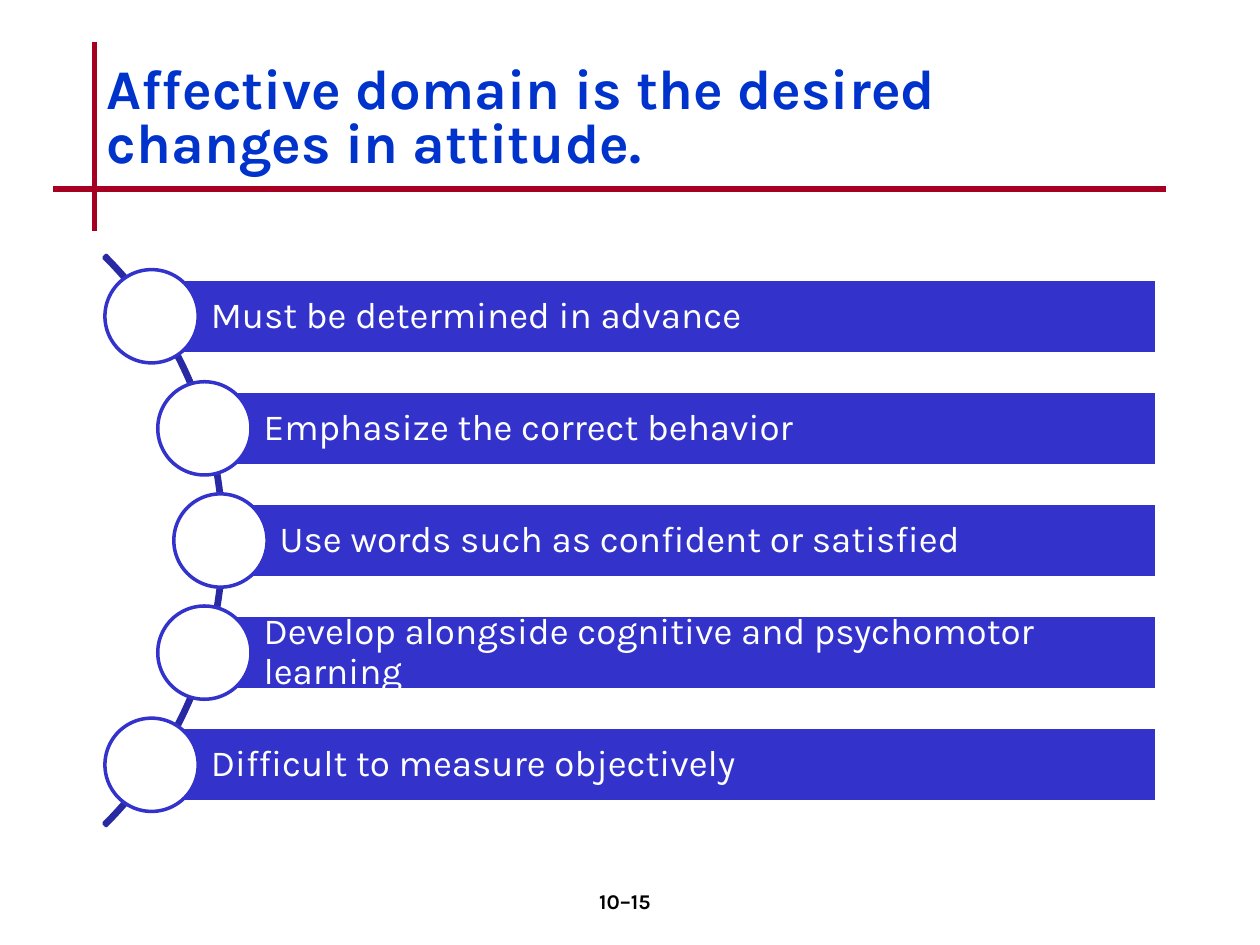
import math
from pptx import Presentation, util as u
from pptx.dml.color import RGBColor
from pptx.enum import shapes, text
from pptx.oxml.ns import qn
from lxml import etree

prs = Presentation()
prs.slide_width, prs.slide_height = u.Inches(10), u.Inches(7.5)
s = prs.slides.add_slide(prs.slide_layouts[6])

# Grid: 10 columns by 7.5 rows
COL, ROW = prs.slide_width / 10, prs.slide_height / 7.5


def grid(*values):
    return [round(v * unit) for v, unit in zip(values, (COL, ROW) * 2)]


def write(sp, wording, color, size, bold=False, spacing=1.0,
          align=text.PP_ALIGN.LEFT, **frame):
    tf = sp.text_frame
    for name, value in {"word_wrap": True, **frame}.items():
        setattr(tf, name, value)
    p = tf.paragraphs[0]
    p.alignment, p.line_spacing = align, spacing
    r = p.add_run()
    r.text = wording
    font = {"name": "Karla", "size": u.Pt(size), "bold": bold}
    for name, value in font.items():
        setattr(r.font, name, value)
    r.font.color.rgb = RGBColor.from_string(color)


# Crossed rules beside and below the title
for ends in [(0.75, 0.33, 0.75, 1.83), (0.42, 1.5, 9.25, 1.5)]:
    rule = s.shapes.add_connector(shapes.MSO_CONNECTOR.STRAIGHT, *grid(*ends))
    rule.line.color.rgb = RGBColor.from_string("A50021")
    rule.line.width = u.Pt(3)
    etree.SubElement(rule._element.spPr, qn("a:effectLst"))

# Title
title = s.shapes.add_textbox(*grid(0.75, 0.33, 8.5, 1.25))
write(title, "Affective domain is the desired changes in attitude.", "0033CC", 32,
      bold=True, spacing=0.8, vertical_anchor=text.MSO_ANCHOR.MIDDLE)

# Arc that carries the circles
ARC_X, ARC_Y, ARC_R = -1.42, 4.29, 3.2
arc = s.shapes.add_shape(
    shapes.MSO_SHAPE.BLOCK_ARC,
    *grid(ARC_X - ARC_R, ARC_Y - ARC_R, 2 * ARC_R, 2 * ARC_R))
for i, value in enumerate((189, 27, 0.004)):
    arc.adjustments[i] = value
arc.shadow.inherit = False
arc.fill.background()
arc.line.color.rgb = RGBColor.from_string("2929A3")
arc.line.width = u.Pt(2)

# Bars, each starting at the centre of its circle on the arc
items = [
    "Must be determined in advance",
    "Emphasize the correct behavior",
    "Use words such as confident or satisfied",
    "Develop alongside cognitive and psychomotor learning",
    "Difficult to measure objectively",
]
PITCH, BAR_H, RIGHT, DIAM, TRACK_R = 0.89, 0.59, 9.18, 0.74, 3.17
for i, item in enumerate(items):
    dy = (i - 2) * PITCH
    x, y = ARC_X + math.sqrt(TRACK_R ** 2 - dy ** 2), ARC_Y + dy
    bar = s.shapes.add_shape(shapes.MSO_SHAPE.RECTANGLE,
                             *grid(x, y - BAR_H / 2, RIGHT - x, BAR_H))
    circle = s.shapes.add_shape(shapes.MSO_SHAPE.OVAL,
                                *grid(x - DIAM / 2, y - DIAM / 2, DIAM, DIAM))
    for sp, fill, line in [(bar, "3333CC", "FFFFFF"), (circle, "FFFFFF", "3333CC")]:
        sp.shadow.inherit = False
        sp.fill.solid()
        sp.fill.fore_color.rgb = RGBColor.from_string(fill)
        sp.line.color.rgb = RGBColor.from_string(line)
        sp.line.width = u.Pt(2)
    inset = u.Inches(0.06)
    write(bar, item, "FFFFFF", 21, spacing=0.9,
          vertical_anchor=text.MSO_ANCHOR.MIDDLE, margin_left=u.Inches(0.47),
          margin_right=inset, margin_top=inset, margin_bottom=inset)

# Page number
number = s.shapes.add_textbox(*grid(3.92, 7, 2.08, 0.5))
write(number, "10–15", "000000", 12, bold=True, align=text.PP_ALIGN.CENTER)

prs.save("out.pptx")
